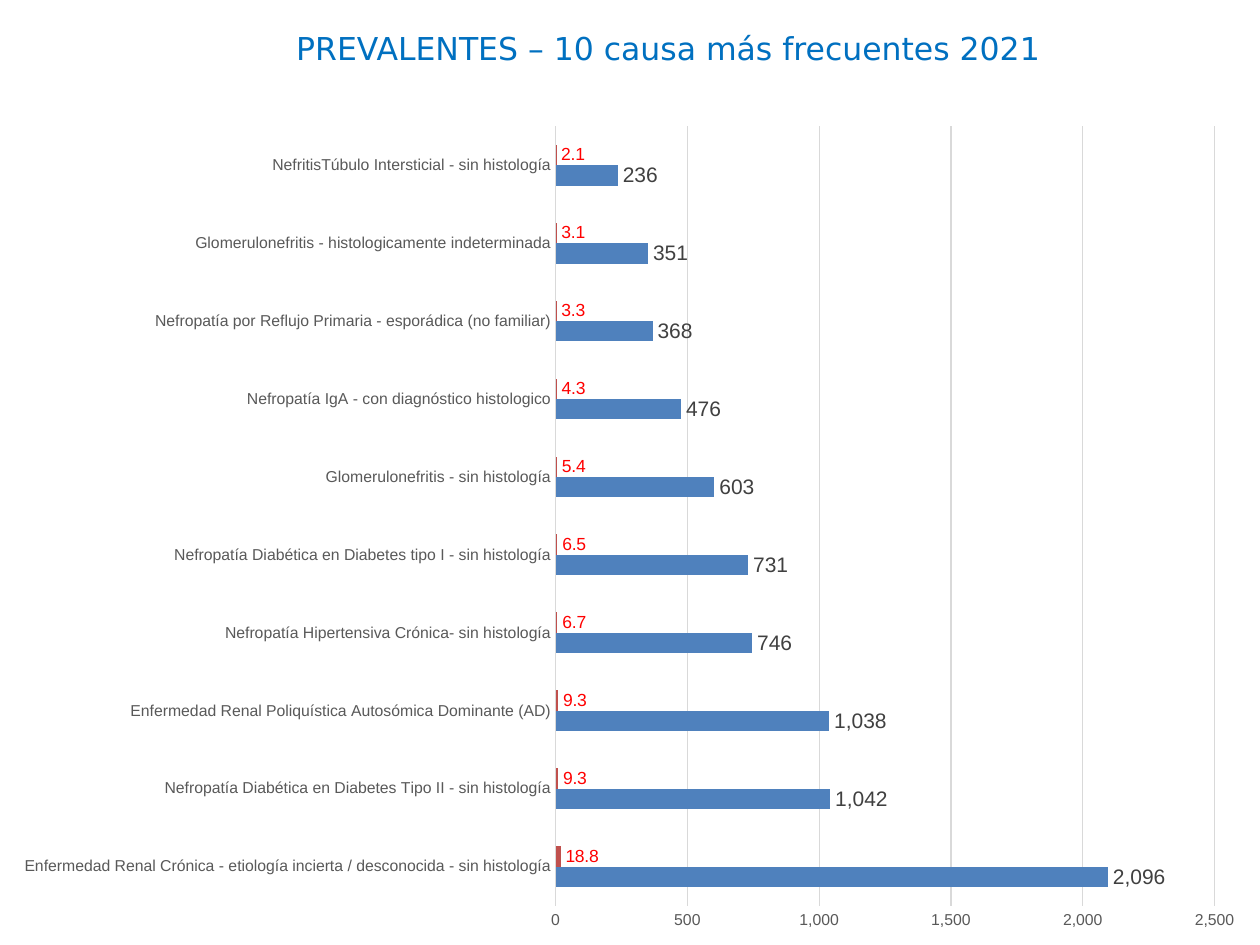
from pptx import Presentation
from pptx.chart import data as chart_data
from pptx.dml.color import RGBColor
from pptx.enum import chart as chart_enum, text
from pptx.oxml import parse_xml
from pptx.oxml.ns import nsdecls, qn
from pptx.util import Pt

TITLE_BLUE = RGBColor(0x00, 0x70, 0xC0)
BAR_BLUE = RGBColor(0x4F, 0x81, 0xBD)
BAR_RED = RGBColor(0xC0, 0x50, 0x4D)
LABEL_RED = RGBColor(0xFF, 0x00, 0x00)
LABEL_GRAY = RGBColor(0x40, 0x40, 0x40)
AXIS_GRAY = RGBColor(0x59, 0x59, 0x59)
LINE_GRAY = RGBColor(0xD9, 0xD9, 0xD9)
BLACK = RGBColor(0x00, 0x00, 0x00)

CAUSES = [
    ("Enfermedad Renal Crónica - etiología incierta / desconocida - sin histología", 2096, 18.8),
    ("Nefropatía Diabética en Diabetes Tipo II - sin histología", 1042, 9.3),
    ("Enfermedad Renal Poliquística Autosómica Dominante (AD)", 1038, 9.3),
    ("Nefropatía Hipertensiva Crónica- sin histología", 746, 6.7),
    ("Nefropatía Diabética en Diabetes tipo I - sin histología", 731, 6.5),
    ("Glomerulonefritis - sin histología", 603, 5.4),
    ("Nefropatía IgA - con diagnóstico histologico", 476, 4.3),
    ("Nefropatía por Reflujo Primaria - esporádica (no familiar)", 368, 3.3),
    ("Glomerulonefritis - histologicamente indeterminada", 351, 3.1),
    ("NefritisTúbulo Intersticial - sin histología", 236, 2.1),
]


def format_font(font, size, color, name="Arial"):
    font.size, font.name, font.bold = Pt(size), name, False
    font.color.rgb = color


def write_text(frame, content, *, size, color, name, align):
    paragraph = frame.paragraphs[0]
    paragraph.alignment = align
    run = paragraph.add_run()
    run.text = content
    format_font(run.font, size, color, name)


presentation = Presentation()
presentation.slide_width, presentation.slide_height = Pt(720), Pt(540)
slide = presentation.slides.add_slide(presentation.slide_layouts[5])

# Title
title = slide.shapes.title
title.left, title.top, title.width, title.height = Pt(126.7), Pt(13), Pt(510.5), Pt(29)
title.text_frame.word_wrap = True
title.text_frame.auto_size = text.MSO_AUTO_SIZE.NONE
title.text_frame.vertical_anchor = text.MSO_ANCHOR.MIDDLE
write_text(title.text_frame, "PREVALENTES – 10 causa más frecuentes 2021",
           size=18, color=TITLE_BLUE, name="DejaVu Sans", align=text.PP_ALIGN.CENTER)

# Bar chart: patients and percentage by cause
names, patients, percentages = zip(*CAUSES)
causes_data = chart_data.CategoryChartData()
causes_data.categories = names
causes_data.add_series("Series 1", patients, "#,##0")
causes_data.add_series("Series 2", percentages, "0.0")
chart = slide.shapes.add_chart(chart_enum.XL_CHART_TYPE.BAR_CLUSTERED,
                               Pt(0), Pt(62.6), Pt(720), Pt(477.4), causes_data).chart
chart.has_legend = False
chart.has_title = False
format_font(chart.font, 10, BLACK)

# Plot area leaves room for the long category names
plot_area = chart.element.find(".//" + qn("c:plotArea"))
for layout in plot_area.findall(qn("c:layout")):
    plot_area.remove(layout)
placement = {"layoutTarget": "inner", "xMode": "edge", "yMode": "edge",
             "x": 0.441, "y": 0.02, "w": 0.523, "h": 0.933}
settings = "".join(f'<c:{tag} val="{value}"/>' for tag, value in placement.items())
plot_area.insert(0, parse_xml(
    f'<c:layout {nsdecls("c")}><c:manualLayout>{settings}</c:manualLayout></c:layout>'))

# Bars and their labels
plot = chart.plots[0]
plot.gap_width = 182
plot.overlap = 0
plot.vary_by_categories = False
series_formats = [(BAR_BLUE, 12, LABEL_GRAY, "#,##0"), (BAR_RED, 10, LABEL_RED, "0.0")]
for series, (fill, size, color, number_format) in zip(plot.series, series_formats):
    series.format.fill.solid()
    series.format.fill.fore_color.rgb = fill
    series.invert_if_negative = False
    labels = series.data_labels
    labels.show_value = True
    labels.position = chart_enum.XL_LABEL_POSITION.OUTSIDE_END
    labels.number_format = number_format
    labels.number_format_is_linked = False
    format_font(labels.font, size, color)

# Axes and gridlines
category_axis, value_axis = chart.category_axis, chart.value_axis
for axis in (category_axis, value_axis):
    axis.major_tick_mark = axis.minor_tick_mark = chart_enum.XL_TICK_MARK.NONE
    format_font(axis.tick_labels.font, 9, AXIS_GRAY)
value_axis.minimum_scale, value_axis.maximum_scale, value_axis.major_unit = 0, 2500, 500
value_axis.tick_labels.number_format = "#,##0"
value_axis.tick_labels.number_format_is_linked = False
value_axis.format.line.fill.background()
value_axis.has_major_gridlines = True
for line in (category_axis.format.line, value_axis.major_gridlines.format.line):
    line.color.rgb = LINE_GRAY
    line.width = Pt(0.75)

presentation.save("out.pptx")
